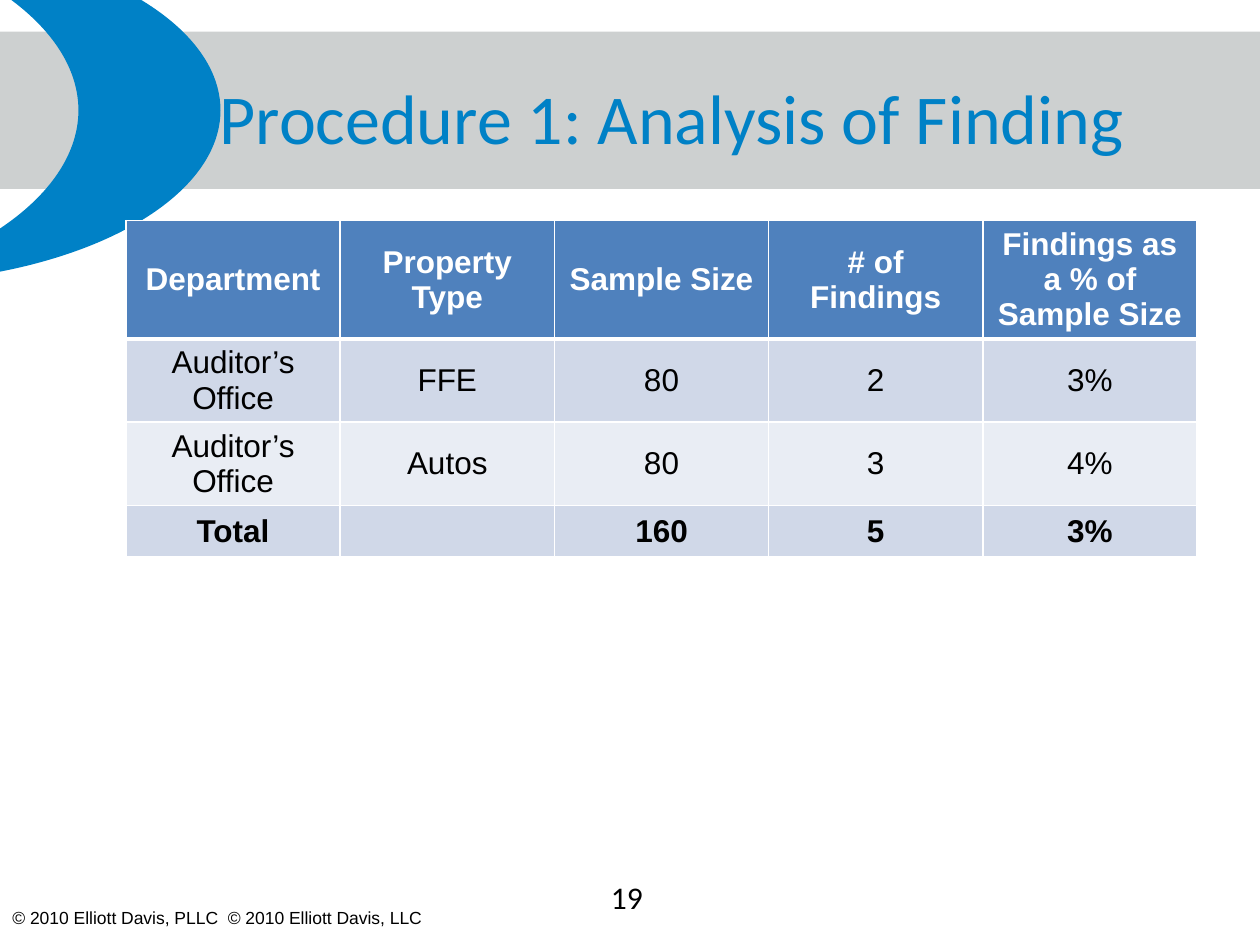
import lxml.etree
import pptx
import pptx.dml.color
import pptx.enum.shapes
import pptx.enum.text
import pptx.oxml
import pptx.oxml.ns
import pptx.util

RGBColor = pptx.dml.color.RGBColor
Shape = pptx.enum.shapes.MSO_SHAPE
Align = pptx.enum.text.PP_ALIGN
Anchor = pptx.enum.text.MSO_ANCHOR
qn = pptx.oxml.ns.qn

BLACK = RGBColor(0x00, 0x00, 0x00)
WHITE = RGBColor(0xFF, 0xFF, 0xFF)
GREY = RGBColor(0xC8, 0xCB, 0xCB)
BLUE = RGBColor(0x00, 0x81, 0xC6)
HEADER = RGBColor(0x4F, 0x81, 0xBD)
BANDS = (RGBColor(0xD0, 0xD8, 0xE8), RGBColor(0xE9, 0xED, 0xF4))

FINDINGS = (
    ("Department", "Property Type", "Sample Size", "# of Findings", "Findings as a % of Sample Size"),
    ("Auditor’s Office", "FFE", "80", "2", "3%"),
    ("Auditor’s Office", "Autos", "80", "3", "4%"),
    ("Total", "", "160", "5", "3%"),
)


def write(frame, text, *, size=18, font="Arial", color=BLACK, bold=False, align=Align.LEFT):
    """Put one formatted line of text in a text frame."""
    para = frame.paragraphs[0]
    para.alignment = align
    para.font.size = pptx.util.Pt(size)
    if text:
        span = para.add_run()
        span.text = text
        span.font.name = font
        span.font.size = pptx.util.Pt(size)
        span.font.bold = bold
        span.font.color.rgb = color


class SlideBuilder:
    """Holds the style and the current slide, on a grid of 40 columns by 30 rows."""

    def __init__(self, deck):
        """Add a title-only slide to the deck."""
        self.column = deck.slide_width / 40
        self.row = deck.slide_height / 30
        self.page = deck.slides.add_slide(deck.slide_layouts[5])

    def place(self, left, top, width, height):
        """Turn grid lengths into slide lengths."""
        return (round(left * self.column), round(top * self.row),
                round(width * self.column), round(height * self.row))

    def shape(self, kind, area, color, *, opacity=100, rotation=0, adjustment=None):
        """Draw a filled preset shape without an outline."""
        shape = self.page.shapes.add_shape(kind, *self.place(*area))
        shape.shadow.inherit = False
        shape.fill.solid()
        shape.fill.fore_color.rgb = color
        shape.line.fill.background()
        shape.rotation = rotation
        if adjustment is not None:
            shape.adjustments[0] = adjustment
        if opacity < 100:
            tint = shape.fill._xPr.find(".//" + qn("a:srgbClr"))
            lxml.etree.SubElement(tint, qn("a:alpha"), val=str(opacity * 1000))

    def title(self, text, area):
        """Format the title placeholder and bring it to the front."""
        title = self.page.shapes.title
        title.left, title.top, title.width, title.height = self.place(*area)
        title.text_frame.vertical_anchor = Anchor.MIDDLE
        write(title.text_frame, text, size=40, font="Calibri", color=BLUE, align=Align.CENTER)
        title.element.getparent().append(title.element)

    def text(self, text, area, **style):
        """Add a text box."""
        box = self.page.shapes.add_textbox(*self.place(*area))
        box.text_frame.word_wrap = True
        write(box.text_frame, text, **style)

    def borders(self, cell, bottom):
        """Give a cell white borders with the given bottom width."""
        properties = cell._tc.get_or_add_tcPr()
        for index, (side, width) in enumerate((("L", 1), ("R", 1), ("T", 1), ("B", bottom))):
            line = pptx.oxml.parse_xml(
                f'<a:ln{side} {pptx.oxml.ns.nsdecls("a")} w="{pptx.util.Pt(width)}">'
                f'<a:solidFill><a:srgbClr val="{WHITE}"/></a:solidFill></a:ln{side}>')
            properties.insert(index, line)

    def table(self, rows, area):
        """Add a banded table with a bold header and total row."""
        last = len(rows) - 1
        table = self.page.shapes.add_table(len(rows), len(rows[0]), *self.place(*area)).table
        for r, values in enumerate(rows):
            for c, value in enumerate(values):
                cell = table.cell(r, c)
                cell.vertical_anchor = Anchor.MIDDLE
                cell.fill.solid()
                cell.fill.fore_color.rgb = BANDS[(r - 1) % 2] if r else HEADER
                self.borders(cell, bottom=1 if r else 3)
                write(cell.text_frame, value, color=BLACK if r else WHITE,
                      bold=r in (0, last), align=Align.CENTER)


def main():
    """Build and save the slide."""
    deck = pptx.Presentation()
    deck.slide_width = pptx.util.Inches(10)
    deck.slide_height = pptx.util.Inches(7.5)
    slide = SlideBuilder(deck)
    slide.shape(Shape.RECTANGLE, (0, 1, 40, 5), GREY, opacity=90)
    slide.shape(Shape.MOON, (-4, -2, 11, 11), BLUE, rotation=180, adjustment=0.41)
    slide.text("© 2010 Elliott Davis, PLLC  © 2010 Elliott Davis, LLC", (0, 28.6, 14.32, 1.08), size=10)
    slide.title("Procedure 1: Analysis of Finding", (3.32, 1.2, 36, 5))
    slide.table(FINDINGS, (4, 7, 34, 6.56))
    slide.text("19", (19, 27.68, 2, 1.6), font="Calibri")
    deck.save("out.pptx")


if __name__ == "__main__":
    main()
